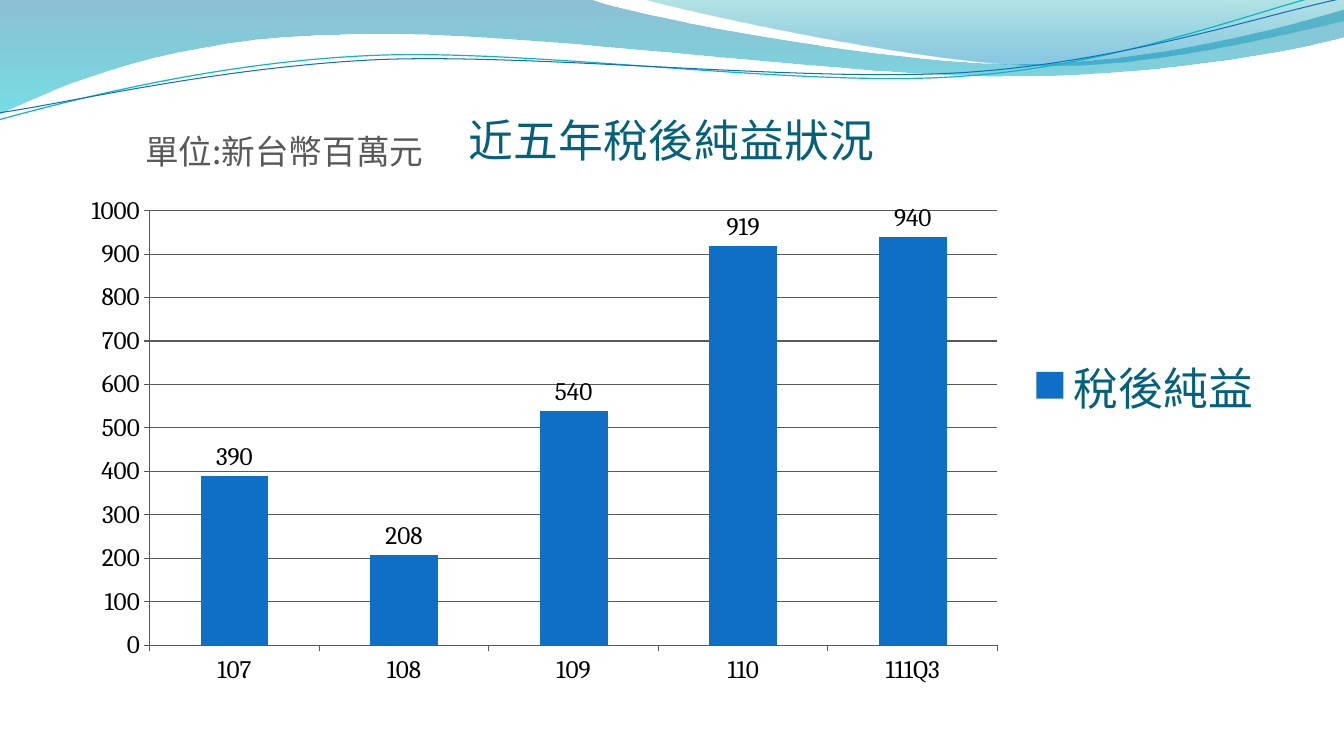
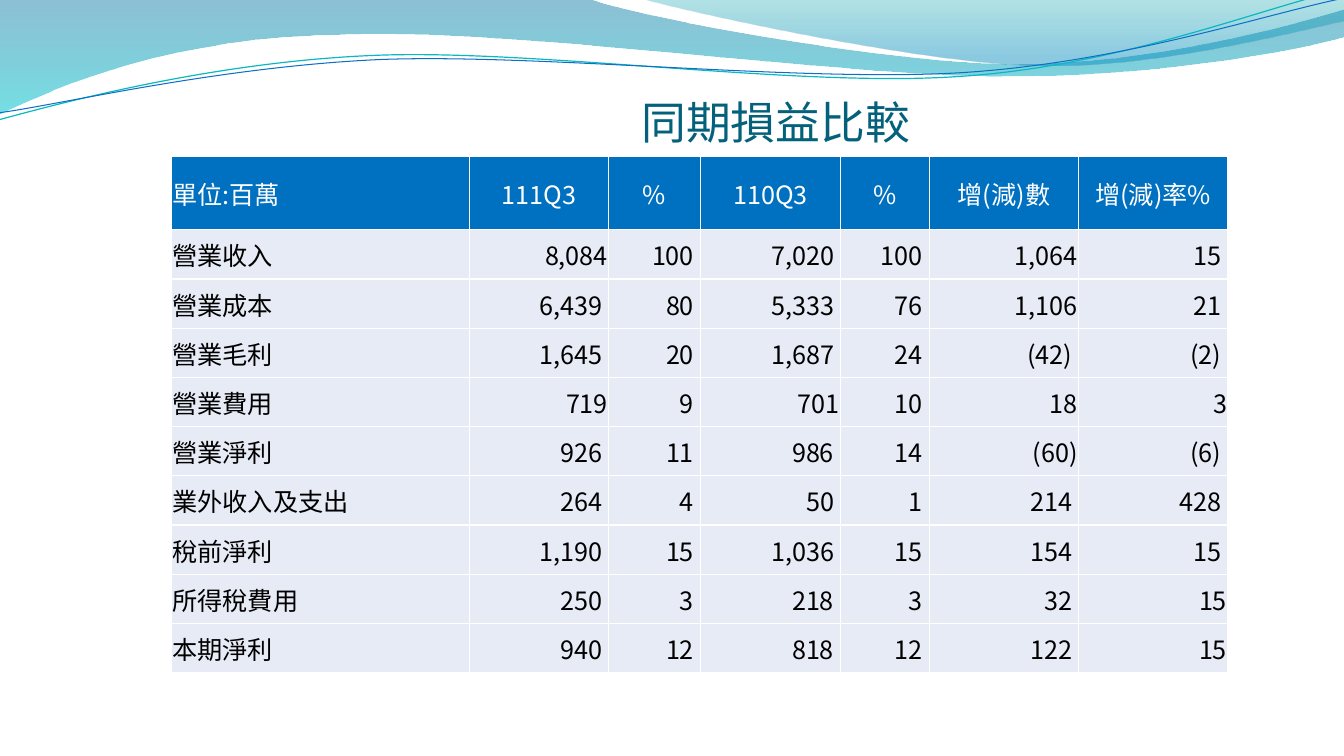
from dataclasses import dataclass
from typing import Any

import lxml.etree
import pptx
import pptx.chart.data
import pptx.dml.color
import pptx.enum.chart
import pptx.enum.text
import pptx.oxml
import pptx.oxml.ns
import pptx.util

Cm = pptx.util.Cm
Pt = pptx.util.Pt
RGBColor = pptx.dml.color.RGBColor
Align = pptx.enum.text.PP_ALIGN
Anchor = pptx.enum.text.MSO_ANCHOR
qn = pptx.oxml.ns.qn

WHITE = RGBColor(0xFF, 0xFF, 0xFF)
BLACK = RGBColor(0x00, 0x00, 0x00)
GREY = RGBColor(0x59, 0x59, 0x59)
TITLE_TEAL = RGBColor(0x04, 0x61, 0x7B)
BLUE = RGBColor(0x0F, 0x6F, 0xC6)
LINE_TEAL = RGBColor(0x0A, 0xB8, 0xBF)
HEADER_BLUE = RGBColor(0x00, 0x70, 0xC0)
ROW_TINT = RGBColor(0xE7, 0xEB, 0xF5)
CJK_FONT = "Noto Sans CJK SC"
CHART_FONT = "Cambria"
TITLE_SIZE = 32


@dataclass(frozen=True)
class GradientStop:
    position: float
    color: RGBColor
    opacity: int


@dataclass(frozen=True)
class Wave:
    start: tuple[float, float]
    segments: tuple[tuple[float, ...], ...]
    stops: tuple[GradientStop, ...] = ()
    line_color: RGBColor | None = None
    line_width: float = 0


@dataclass(frozen=True)
class Label:
    text: str
    left: float
    top: float
    width: float
    height: float
    size: int
    color: RGBColor
    anchor: Any


WAVES = (
    Wave((0, 0), (
        (14.91, -0.02),
        (16.1, 0.43, 22.48, 1.6, 25.68, 1.6),
        (28.91, 1.6, 32.46, 0.66, 33.86, 0.23),
        (33.91, 0.91),
        (33.3, 1.12, 29.46, 1.93, 25.25, 1.91),
        (21.06, 1.91, 12.93, 0.71, 8.71, 0.86),
        (4.37, 0.91, 1.55, 2.11, -0.03, 2.88),
    ), stops=(GradientStop(0, RGBColor(0x00, 0x74, 0xA1), 45),
              GradientStop(1, RGBColor(0x00, 0xC6, 0xCF), 55))),
    Wave((16.23, -0.02), (
        (17.25, 0.28, 23.09, 1.57, 26.04, 1.65),
        (28.98, 1.75, 32.56, 0.81, 33.86, 0.53),
        (33.86, 0),
    ), stops=(GradientStop(0, RGBColor(0x00, 0xA1, 0xA9), 30),
              GradientStop(0.8, RGBColor(0x00, 0x8B, 0xBF), 45))),
    Wave((-0.03, 3.02), (
        (1.63, 2.57, 5.36, 1.57, 9.37, 1.4),
        (13.39, 1.22, 20.07, 2.21, 24.13, 1.93),
        (28.19, 1.68, 31.8, 0.2, 33.81, -0.25),
    ), line_color=LINE_TEAL, line_width=0.85),
    Wave((0, 2.84), (
        (1.6, 2.62, 5.54, 1.68, 9.6, 1.5),
        (13.64, 1.35, 20.22, 2.08, 24.26, 1.83),
        (28.32, 1.57, 31.88, 0.36, 33.88, -0.05),
    ), line_color=BLUE, line_width=0.75),
)

UNIT_LABEL = Label("單位:新台幣百萬元", 3.09, 3.21, 8.15, 1.22, 24, GREY, Anchor.MIDDLE)
TABLE_TITLE = Label("同期損益比較", 7.17, 2.01, 24.77, 1.73, TITLE_SIZE, TITLE_TEAL, Anchor.BOTTOM)

PROFITS = {"107": 390, "108": 208, "109": 540, "110": 919, "111Q3": 940}

COLUMN_WIDTHS = (7.51, 3.51, 2.31, 3.53, 2.24, 3.76, 3.76)
HEADER_HEIGHT = 1.85
ROW_HEIGHT = 1.24
TABLE_ROWS = (
    ("單位:百萬", "111Q3", "%", "110Q3", "%", "增(減)數", "增(減)率%"),
    ("營業收入", "8,084", "100 ", "7,020 ", "100 ", "1,064", "15 "),
    ("營業成本", "6,439 ", "80 ", "5,333 ", "76 ", "1,106", "21 "),
    ("營業毛利", "1,645 ", "20 ", "1,687 ", "24 ", "(42) ", "(2) "),
    ("營業費用", "719", "9 ", "701", "10 ", "18", "3"),
    ("營業淨利", "926 ", "11 ", "986 ", "14 ", "(60)", "(6) "),
    ("業外收入及支出", "264 ", "4 ", "50 ", "1 ", "214 ", "428 "),
    ("稅前淨利", "1,190 ", "15 ", "1,036 ", "15 ", "154 ", "15 "),
    ("所得稅費用", "250 ", "3 ", "218 ", "3 ", "32 ", "15"),
    ("本期淨利", "940 ", "12 ", "818 ", "12 ", "122 ", "15"),
)


def style_font(font: Any, size: int, color: RGBColor, name: str = CJK_FONT) -> None:
    font.size = Pt(size)
    font.bold = False
    font.color.rgb = color
    font.name = name
    lxml.etree.SubElement(font._rPr, qn("a:ea")).set("typeface", name)


def bend_segments(shape: Any, wave: Wave) -> None:
    straight_lines = iter(list(shape.element.iter(qn("a:lnTo"))))
    for segment in wave.segments:
        line = next(straight_lines)
        if len(segment) == 2:
            continue
        curve = lxml.etree.Element(qn("a:cubicBezTo"))
        line.addprevious(curve)
        for control in (line, next(straight_lines), next(straight_lines)):
            curve.append(control[0])
            control.getparent().remove(control)


def draw_wave(slide: Any, wave: Wave) -> Any:
    builder = slide.shapes.build_freeform(Cm(wave.start[0]), Cm(wave.start[1]))
    builder.add_line_segments(
        [(Cm(x), Cm(y)) for segment in wave.segments
         for x, y in zip(segment[::2], segment[1::2])],
        close=bool(wave.stops))
    shape = builder.convert_to_shape()
    bend_segments(shape, wave)
    shape.shadow.inherit = False
    if wave.stops:
        shape.fill.gradient()
        shape.fill.gradient_angle = 270
        for target, stop in zip(shape.fill.gradient_stops, wave.stops):
            target.position = stop.position
            target.color.rgb = stop.color
        for color, stop in zip(shape.element.iter(qn("a:srgbClr")), wave.stops):
            lxml.etree.SubElement(color, qn("a:alpha")).set("val", str(stop.opacity * 1000))
        shape.line.fill.background()
    else:
        shape.fill.background()
        shape.line.color.rgb = wave.line_color
        shape.line.width = Pt(wave.line_width)
    return shape


def move_waves_to_layout(slide: Any, layout: Any) -> None:
    for placeholder in list(layout.placeholders):
        layout.shapes.element.remove(placeholder.element)
    for wave in WAVES:
        layout.shapes.element.append(draw_wave(slide, wave).element)


def add_label(slide: Any, label: Label) -> None:
    box = slide.shapes.add_textbox(Cm(label.left), Cm(label.top), Cm(label.width), Cm(label.height))
    frame = box.text_frame
    frame.word_wrap = True
    frame.vertical_anchor = label.anchor
    frame.margin_bottom = 0 if label.anchor == Anchor.BOTTOM else Cm(0.13)
    para = frame.paragraphs[0]
    para.text = label.text
    para.alignment = Align.CENTER
    style_font(para.font, label.size, label.color)


def layout_xml(**settings: Any) -> Any:
    values = "".join(f'<c:{key} val="{value}"/>' for key, value in settings.items())
    return pptx.oxml.parse_xml(
        '<c:layout xmlns:c="http://schemas.openxmlformats.org/drawingml/2006/chart">'
        f"<c:manualLayout>{values}</c:manualLayout></c:layout>")


def place_plot(chart: Any) -> None:
    plot_area = chart.element.find(".//" + qn("c:plotArea"))
    for old in plot_area.findall(qn("c:layout")):
        plot_area.remove(old)
    plot_area.insert(0, layout_xml(layoutTarget="inner", xMode="edge", yMode="edge",
                                   x=0.068, y=0.22, w=0.701, h=0.697))


def place_title(chart: Any) -> None:
    title = chart.element.find(".//" + qn("c:title"))
    for old in title.findall(qn("c:layout")):
        title.remove(old)
    title.find(qn("c:tx")).addnext(layout_xml(xMode="edge", yMode="edge", x=0.325, y=0.029))


def add_profit_chart(slide: Any) -> None:
    data = pptx.chart.data.CategoryChartData()
    data.categories = list(PROFITS)
    data.add_series("稅後純益", list(PROFITS.values()))
    chart = slide.shapes.add_chart(
        pptx.enum.chart.XL_CHART_TYPE.COLUMN_CLUSTERED,
        Cm(1.7), Cm(1.85), Cm(30.48), Cm(15.72), data).chart
    style_font(chart.font, 18, BLACK, CHART_FONT)

    chart.has_title = True
    title = chart.chart_title.text_frame.paragraphs[0]
    title.text = "近五年稅後純益狀況"
    style_font(title.font, TITLE_SIZE, TITLE_TEAL)
    chart.chart_title.include_in_layout = False

    chart.has_legend = True
    chart.legend.position = pptx.enum.chart.XL_LEGEND_POSITION.RIGHT
    chart.legend.include_in_layout = False
    style_font(chart.legend.font, TITLE_SIZE, TITLE_TEAL)

    plot = chart.plots[0]
    plot.gap_width = 150
    plot.vary_by_categories = False
    plot.has_data_labels = True
    plot.data_labels.show_value = True
    plot.data_labels.position = pptx.enum.chart.XL_LABEL_POSITION.OUTSIDE_END
    fill = plot.series[0].format.fill
    fill.solid()
    fill.fore_color.rgb = BLUE

    value_axis = chart.value_axis
    value_axis.minimum_scale = 0
    value_axis.maximum_scale = 1000
    value_axis.major_unit = 100
    value_axis.has_major_gridlines = True
    for ruled in (value_axis, chart.category_axis, value_axis.major_gridlines):
        ruled.format.line.color.rgb = GREY
        ruled.format.line.width = Pt(0.75)
    place_plot(chart)
    place_title(chart)


def add_borders(cell: Any) -> None:
    properties = cell._tc.get_or_add_tcPr()
    for index, side in enumerate(("lnL", "lnR", "lnT", "lnB")):
        properties.insert(index, pptx.oxml.parse_xml(
            f'<a:{side} xmlns:a="http://schemas.openxmlformats.org/drawingml/2006/main" w="{Pt(1)}">'
            f'<a:solidFill><a:srgbClr val="{WHITE}"/></a:solidFill></a:{side}>'))


def fill_cell(cell: Any, text: str, is_header: bool, is_first: bool) -> None:
    cell.fill.solid()
    cell.fill.fore_color.rgb = HEADER_BLUE if is_header else ROW_TINT
    cell.vertical_anchor = Anchor.MIDDLE
    cell.margin_left = cell.margin_right = cell.margin_top = Cm(0.02)
    cell.margin_bottom = 0
    para = cell.text_frame.paragraphs[0]
    para.text = text
    para.alignment = Align.LEFT if is_first else Align.CENTER if is_header else Align.RIGHT
    style_font(para.font, 18, WHITE if is_header else BLACK)
    add_borders(cell)


def add_income_table(slide: Any) -> None:
    heights = [HEADER_HEIGHT] + [ROW_HEIGHT] * (len(TABLE_ROWS) - 1)
    table = slide.shapes.add_table(
        len(TABLE_ROWS), len(COLUMN_WIDTHS), Cm(4.32), Cm(3.94),
        Cm(sum(COLUMN_WIDTHS)), Cm(sum(heights))).table
    for column, width in zip(table.columns, COLUMN_WIDTHS):
        column.width = Cm(width)
    for row, height, texts in zip(table.rows, heights, TABLE_ROWS):
        row.height = Cm(height)
        for index, text in enumerate(texts):
            fill_cell(row.cells[index], text, texts is TABLE_ROWS[0], index == 0)


def main() -> None:
    deck = pptx.Presentation()
    deck.slide_width = Cm(33.87)
    deck.slide_height = Cm(19.05)
    blank = deck.slide_layouts[6]
    chart_page = deck.slides.add_slide(blank)
    move_waves_to_layout(chart_page, blank)
    add_profit_chart(chart_page)
    add_label(chart_page, UNIT_LABEL)
    table_page = deck.slides.add_slide(blank)
    add_label(table_page, TABLE_TITLE)
    add_income_table(table_page)
    deck.save("out.pptx")


if __name__ == "__main__":
    main()
